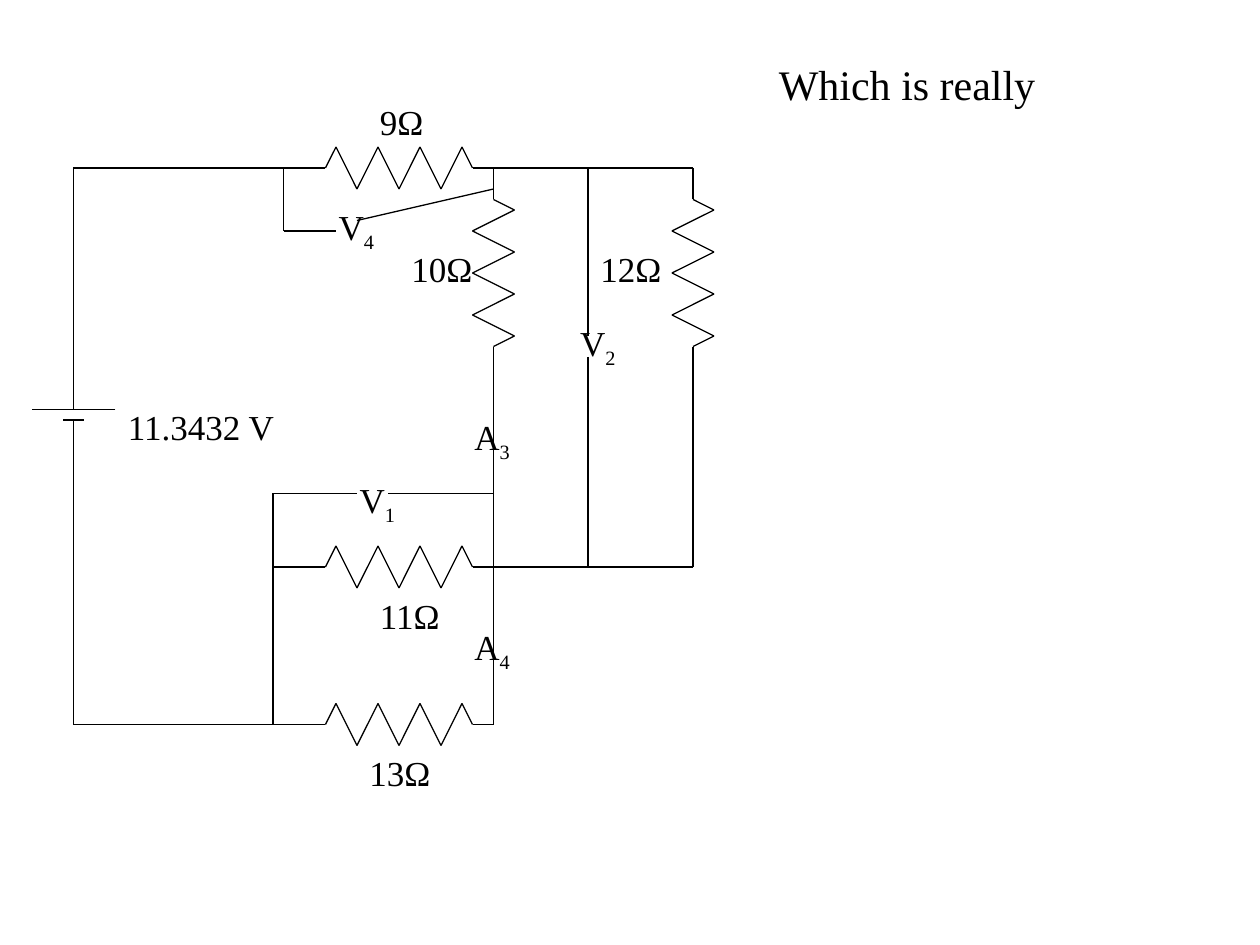
from lxml.etree import SubElement
from pptx import Presentation
from pptx.dml.color import RGBColor
from pptx.enum.shapes import MSO_CONNECTOR
from pptx.enum.text import MSO_AUTO_SIZE, PP_ALIGN
from pptx.oxml.ns import qn
from pptx.util import Emu, Pt

SCALE = 9525  # EMU in one px, 96 px to the inch
INK = "000000"
FONT = "Times New Roman"

# Each wire is a chain of corner points.
WIRES = [
    # battery and left side
    [(248, 128), (56, 128), (56, 312)],
    [(88, 312), (24, 312)],
    [(64, 320), (48, 320)],
    [(56, 320), (56, 360)],
    [(56, 352), (56, 552), (240, 552)],
    # top rail and its two branches
    [(360, 128), (376, 128)],
    [(368, 128), (528, 128), (528, 144)],
    [(376, 128), (376, 136), (376, 152)],
    [(528, 136), (528, 152)],
    [(376, 264), (376, 280)],
    [(528, 264), (528, 280)],
    [(376, 272), (376, 440)],
    [(528, 280), (528, 432), (376, 432)],
    # lower pair
    [(248, 432), (232, 432), (208, 432), (208, 552)],
    [(360, 432), (376, 432), (376, 552), (360, 552)],
    [(232, 552), (248, 552)],
    # voltmeter leads
    [(256, 176), (216, 176), (216, 128)],
    [(272, 168), (376, 144)],
    [(448, 128), (448, 256)],
    [(448, 272), (448, 432)],
    [(272, 376), (208, 376), (208, 432)],
    [(296, 376), (376, 376)],
]

# Start of the zigzag, and whether it runs downward
COILS = [
    (248, 128, False),
    (248, 432, False),
    (248, 552, False),
    (376, 152, True),
    (528, 152, True),
]

OHMS = [
    ("9Ω", 280, 72, 53),
    ("11Ω", 280, 448, 66),
    ("13Ω", 272, 568, 66),
    ("10Ω", 304, 184, 66),
    ("12Ω", 448, 184, 66),
]

METERS = [
    ("A", "3", 352, 312),
    ("A", "4", 352, 472),
    ("V", "1", 264, 360),
    ("V", "2", 432, 240),
    ("V", "4", 248, 152),
]


def px(num):
    return Emu(num * SCALE)


def color(code):
    return RGBColor.from_string(code)


def add_wire(slide, points):
    for start, end in zip(points, points[1:]):
        line = slide.shapes.add_connector(
            MSO_CONNECTOR.STRAIGHT, *map(px, start + end))
        line.line.color.rgb = color(INK)
        line.line.width = Pt(0.75)
        SubElement(line._element.spPr, qn("a:effectLst"))


def add_coil(slide, left, top, down):
    """Draw a resistor's zigzag: seven peaks, 16 px apart, on a 112 px axis."""
    peaks = [(8 + 16 * i, 16 * (-1) ** i) for i in range(7)]
    steps = [(0, 0), *peaks, (112, 0)]
    if down:
        points = [(left + side, top + along) for along, side in steps]
    else:
        points = [(left + along, top - side) for along, side in steps]
    add_wire(slide, points)


def add_text(slide, text, left, top, width, height=41, sub="", size=20,
             align=PP_ALIGN.LEFT, wrap=False):
    box = slide.shapes.add_textbox(*map(px, (left, top, width, height)))
    frame = box.text_frame
    frame.word_wrap = wrap
    frame.auto_size = MSO_AUTO_SIZE.SHAPE_TO_FIT_TEXT
    para = frame.paragraphs[0]
    para.alignment = align
    for part in filter(None, (text, sub)):
        run = para.add_run()
        run.text = part
        run.font.name = FONT
        run.font.size = Pt(size)
        run.font.color.rgb = color(INK)
    if sub:
        run._r.get_or_add_rPr().set("baseline", "-25000")


def main():
    deck = Presentation()
    deck.slide_width, deck.slide_height = px(960), px(720)
    slide = deck.slides.add_slide(deck.slide_layouts[6])

    for points in WIRES:
        add_wire(slide, points)
    for coil in COILS:
        add_coil(slide, *coil)
    for label in OHMS:
        add_text(slide, *label)
    for kind, sub, left, top in METERS:
        align = PP_ALIGN.CENTER if kind == "V" else PP_ALIGN.LEFT
        add_text(slide, kind, left, top, 47, sub=sub, align=align)
    add_text(slide, "11.3432 V", 88, 304, 132)
    add_text(slide, "Which is really", 584, 40, 296, 86, size=24, wrap=True)

    deck.save("out.pptx")


if __name__ == "__main__":
    main()
